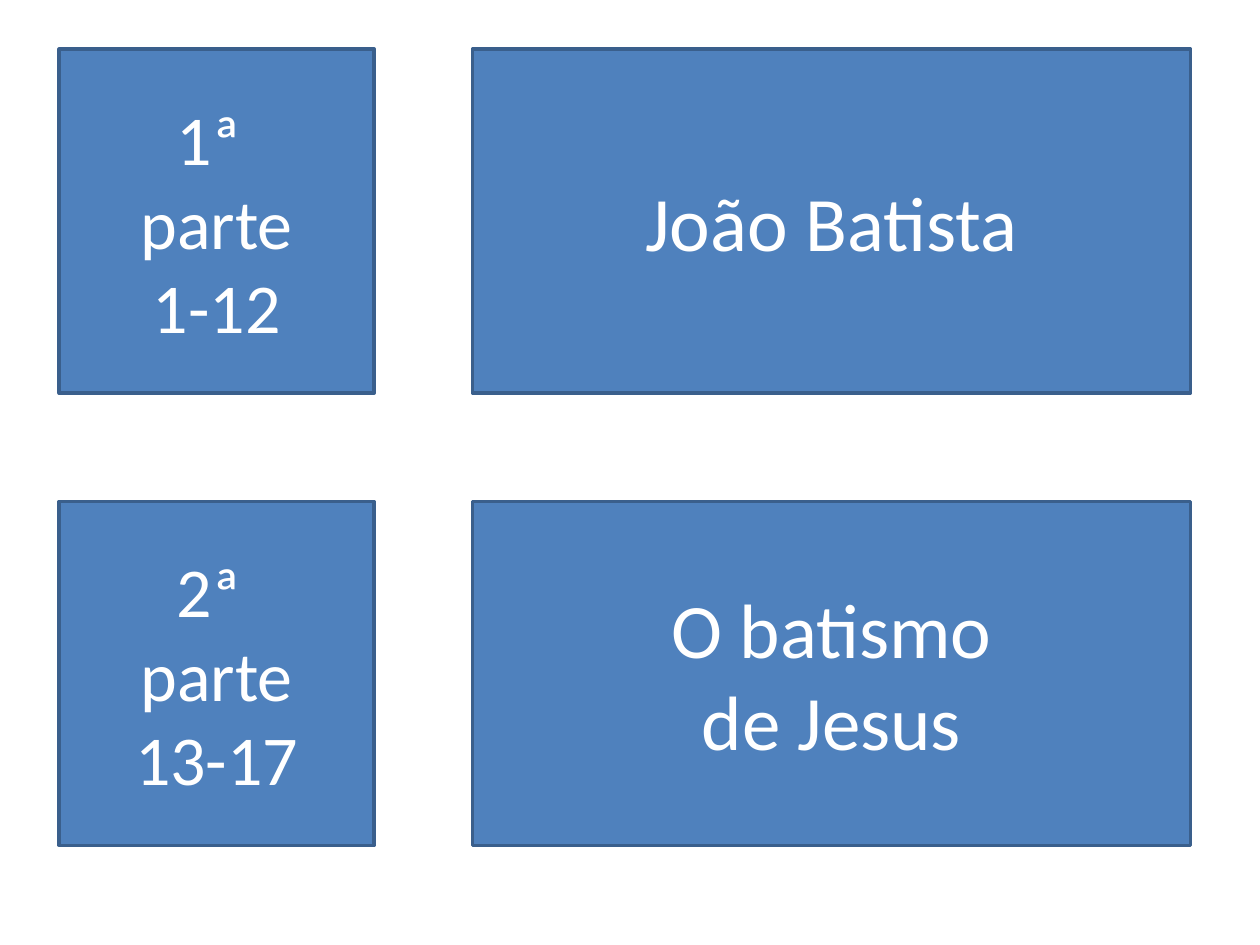
from dataclasses import dataclass

from pptx import Presentation
from pptx.dml.color import RGBColor
from pptx.enum.shapes import MSO_SHAPE
from pptx.enum.text import MSO_ANCHOR, PP_ALIGN
from pptx.slide import Slide
from pptx.util import Pt

COLORS = {"fill": "4F81BD", "border": "3A5F8C", "text": "FFFFFF"}
ROW_TOPS = (28.08, 286.56)
BOX_HEIGHT = 196.56


@dataclass(frozen=True)
class Column:
    left: float
    width: float
    font_size: float


@dataclass(frozen=True)
class Part:
    label: tuple[str, ...]
    subject: tuple[str, ...]


LABEL_COLUMN = Column(left=33.84, width=180, font_size=40)
SUBJECT_COLUMN = Column(left=270, width=410.4, font_size=44)

PARTS = (
    Part(("1ª ", "parte", "1-12"), ("João Batista",)),
    Part(("2ª ", "parte", "13-17"), ("O batismo", "de Jesus")),
)


def color(name: str) -> RGBColor:
    return RGBColor.from_string(COLORS[name])


def add_box(slide: Slide, column: Column, top: float, lines: tuple[str, ...]) -> None:
    """Draw a bordered rectangle with one centred paragraph per line."""
    shape = slide.shapes.add_shape(
        MSO_SHAPE.RECTANGLE,
        Pt(column.left), Pt(top), Pt(column.width), Pt(BOX_HEIGHT),
    )
    shape.shadow.inherit = False
    shape.fill.solid()
    shape.fill.fore_color.rgb = color("fill")
    shape.line.color.rgb = color("border")
    shape.line.width = Pt(2)

    text_frame = shape.text_frame
    text_frame.word_wrap = True
    text_frame.vertical_anchor = MSO_ANCHOR.MIDDLE
    text_frame.text = "\n".join(lines)
    font_format = {"name": "Calibri", "size": Pt(column.font_size)}
    for paragraph in text_frame.paragraphs:
        paragraph.alignment = PP_ALIGN.CENTER
        font = paragraph.runs[0].font
        for attribute, value in font_format.items():
            setattr(font, attribute, value)
        font.color.rgb = color("text")


def main() -> None:
    presentation = Presentation()
    presentation.slide_width = Pt(720)
    presentation.slide_height = Pt(540)
    slide = presentation.slides.add_slide(presentation.slide_layouts[6])
    for top, part in zip(ROW_TOPS, PARTS):
        add_box(slide, LABEL_COLUMN, top, part.label)
        add_box(slide, SUBJECT_COLUMN, top, part.subject)
    presentation.save("out.pptx")


if __name__ == "__main__":
    main()
